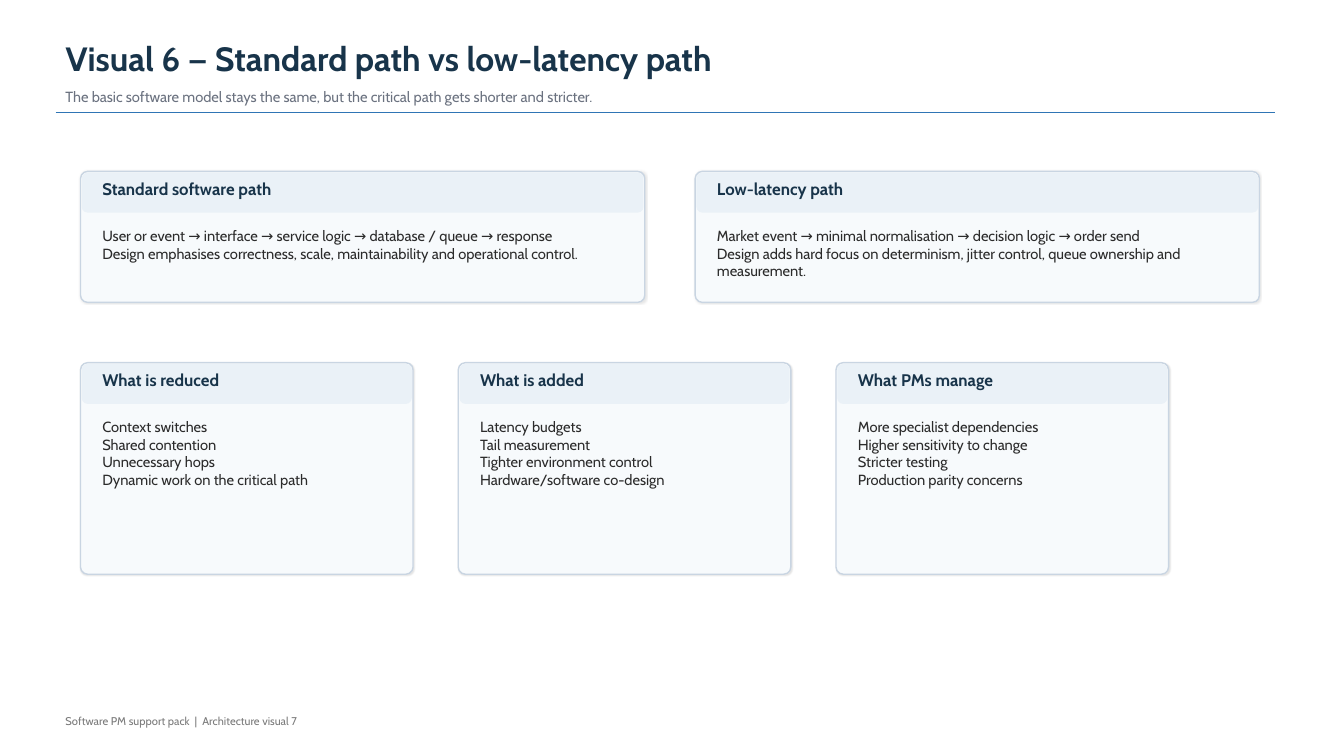
import pptx
import pptx.dml.color
import pptx.enum.shapes
import pptx.enum.text
import pptx.oxml
import pptx.oxml.ns
import pptx.util
from lxml import etree

Cm = pptx.util.Cm
Pt = pptx.util.Pt
MIDDLE = pptx.enum.text.MSO_ANCHOR.MIDDLE
TOP = pptx.enum.text.MSO_ANCHOR.TOP

COLORS = {
    "heading": "18344A",
    "subtitle": "6B7280",
    "rule": "2F75B5",
    "card": "F7FAFC",
    "border": "C9D5E2",
    "band": "EAF1F7",
    "body": "2B2B2B",
    "footer": "7A7A7A",
}

SHADOW = (
    f'<a:outerShdw {pptx.oxml.ns.nsdecls("a")} blurRad="12700" dist="6350" '
    'dir="2700000" algn="ctr" rotWithShape="0"><a:srgbClr val="000000">'
    '<a:alpha val="10000"/></a:srgbClr></a:outerShdw>'
)


class SlideBuilder:
    font = "Cabin"

    def __init__(self, slide):
        self.slide = slide

    def color(self, name):
        return pptx.dml.color.RGBColor.from_string(COLORS[name])

    def fill_text(self, box, lines, size, color, bold=False, anchor=MIDDLE):
        frame = box.text_frame
        frame.text = "\n".join(lines)
        frame.word_wrap = True
        frame.auto_size = pptx.enum.text.MSO_AUTO_SIZE.NONE
        frame.vertical_anchor = anchor
        for paragraph in frame.paragraphs:
            paragraph.alignment = pptx.enum.text.PP_ALIGN.LEFT
            paragraph.font.name = self.font
            paragraph.font.size = Pt(size)
            paragraph.font.bold = bold
            paragraph.font.color.rgb = self.color(color)

    def title(self, left, top, width, height, text):
        heading = self.slide.shapes.title
        heading.left, heading.top = Cm(left), Cm(top)
        heading.width, heading.height = Cm(width), Cm(height)
        self.fill_text(heading, [text], 24, "heading", bold=True)

    def text(self, left, top, width, height, lines, size, color, **style):
        box = self.slide.shapes.add_textbox(Cm(left), Cm(top), Cm(width), Cm(height))
        self.fill_text(box, lines, size, color, **style)

    def rule(self, left, right, y):
        line = self.slide.shapes.add_connector(
            pptx.enum.shapes.MSO_CONNECTOR.STRAIGHT, Cm(left), Cm(y), Cm(right), Cm(y))
        line.line.color.rgb = self.color("rule")
        line.line.width = Pt(1)
        etree.SubElement(line._element.spPr, pptx.oxml.ns.qn("a:effectLst"))

    def panel(self, left, top, width, height, radius, fill, border):
        panel = self.slide.shapes.add_shape(
            pptx.enum.shapes.MSO_SHAPE.ROUNDED_RECTANGLE,
            Cm(left), Cm(top), Cm(width), Cm(height))
        panel.adjustments[0] = radius / height
        panel.fill.solid()
        panel.fill.fore_color.rgb = self.color(fill)
        panel.line.color.rgb = self.color(border)
        panel.line.width = Pt(1)
        panel.shadow.inherit = False
        return panel

    def card(self, left, top, width, height, heading, lines):
        base = self.panel(left, top, width, height, 0.18, "card", "border")
        effects = base._element.spPr.find(pptx.oxml.ns.qn("a:effectLst"))
        effects.append(pptx.oxml.parse_xml(SHADOW))
        self.panel(left + 0.05, top + 0.05, width - 0.1, 0.97, 0.13, "band", "band")
        inner_left, inner_width = left + 0.3, width - 0.6
        self.text(inner_left, top + 0.2, inner_width, 0.46, [heading],
                  12, "heading", bold=True)
        self.text(inner_left, top + 1.27, inner_width, height - 1.52, lines,
                  10.5, "body", anchor=TOP)

    def card_row(self, top, width, height, gap, cards):
        for index, (heading, lines) in enumerate(cards):
            self.card(2.03 + index * (width + gap), top, width, height, heading, lines)


PATHS = [
    ("Standard software path", [
        "User or event → interface → service logic → database / queue → response",
        "Design emphasises correctness, scale, maintainability and operational control.",
    ]),
    ("Low-latency path", [
        "Market event → minimal normalisation → decision logic → order send",
        "Design adds hard focus on determinism, jitter control, queue ownership and measurement.",
    ]),
]

CONSEQUENCES = [
    ("What is reduced", [
        "Context switches",
        "Shared contention",
        "Unnecessary hops",
        "Dynamic work on the critical path",
    ]),
    ("What is added", [
        "Latency budgets",
        "Tail measurement",
        "Tighter environment control",
        "Hardware/software co-design",
    ]),
    ("What PMs manage", [
        "More specialist dependencies",
        "Higher sensitivity to change",
        "Stricter testing",
        "Production parity concerns",
    ]),
]


def main():
    deck = pptx.Presentation()
    deck.slide_width, deck.slide_height = Cm(33.87), Cm(19.05)
    builder = SlideBuilder(deck.slides.add_slide(deck.slide_layouts[5]))
    builder.title(1.4, 0.89, 24.89, 1.14, "Visual 6 — Standard path vs low-latency path")
    builder.text(
        1.4, 2.08, 30.48, 0.71,
        ["The basic software model stays the same, but the critical path gets shorter and stricter."],
        10.5, "subtitle")
    builder.rule(1.4, 32.13, 2.84)
    builder.card_row(4.32, 14.22, 3.3, 1.27, PATHS)
    builder.card_row(9.14, 8.38, 5.33, 1.14, CONSEQUENCES)
    builder.text(1.4, 17.91, 10.16, 0.51,
                 ["Software PM support pack  |  Architecture visual 7"], 8, "footer")
    deck.save("out.pptx")


if __name__ == "__main__":
    main()
